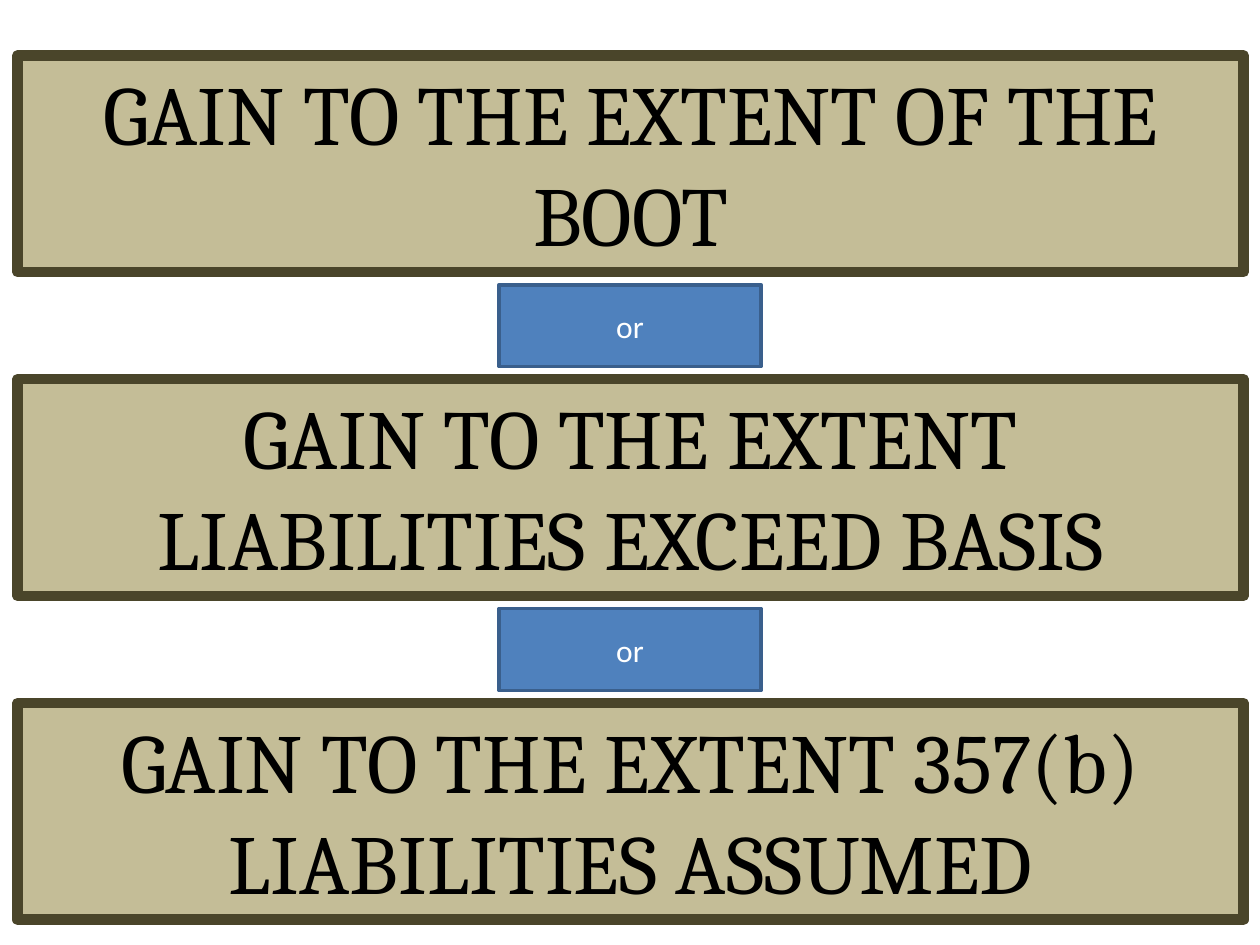
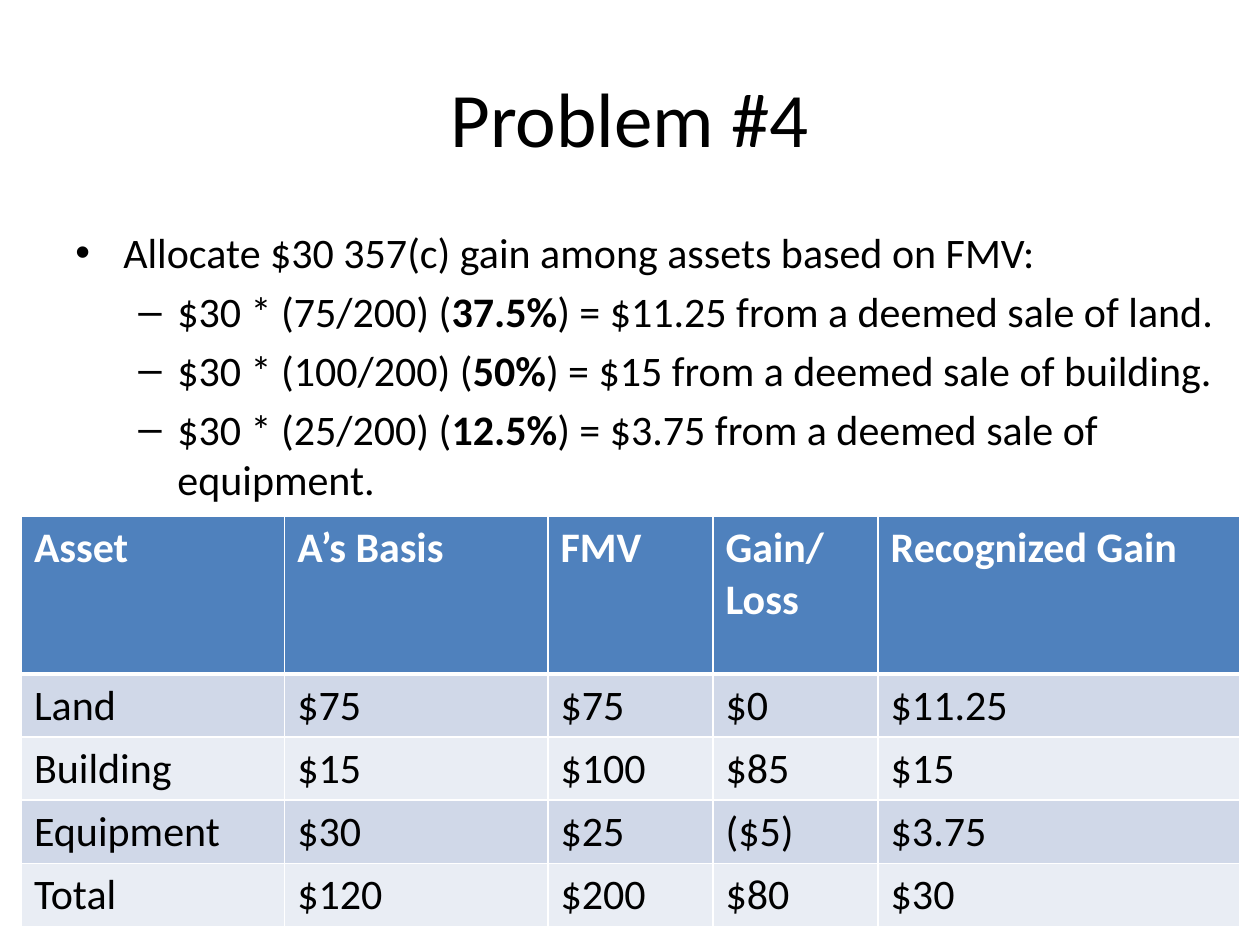
from dataclasses import dataclass

from lxml.etree import SubElement
from pptx import Presentation
from pptx.dml.color import RGBColor
from pptx.enum.shapes import MSO_SHAPE as Preset
from pptx.enum.text import MSO_ANCHOR as Anchor, PP_ALIGN as Align
from pptx.oxml.ns import qn
from pptx.util import Inches, Pt


@dataclass(frozen=True)
class Theme:
    body_font: str = "Calibri"
    card_font: str = "Cambria"
    black: str = "000000"
    white: str = "FFFFFF"
    card_fill: str = "C4BD97"
    card_line: str = "4A452A"
    accent: str = "4F81BD"
    accent_line: str = "3A5F8C"
    bands: tuple = ("D0D8E8", "E9EDF4")
    card_size: int = 48
    title_size: int = 44
    body_size: int = 24
    label_size: int = 18


class Deck:
    def __init__(self, theme):
        self.theme = theme
        self.presentation = Presentation()
        self.presentation.slide_width = Inches(10)
        self.presentation.slide_height = Inches(7.5)
        self.slide = None

    def new_slide(self):
        layout = self.presentation.slide_layouts[6]
        self.slide = self.presentation.slides.add_slide(layout)

    def style(self, paragraph, size, color, font=None, bold=False):
        for run in paragraph.runs:
            run.font.name = font or self.theme.body_font
            run.font.size = Pt(size)
            run.font.bold = bold
            run.font.color.rgb = RGBColor.from_string(color)

    def box(self, text, left, top, width, height, fill, line, line_width,
            size, color, font=None, anchor=Anchor.MIDDLE):
        shape = self.slide.shapes.add_shape(
            Preset.RECTANGLE, Inches(left), Inches(top), Inches(width), Inches(height))
        shape.shadow.inherit = False
        shape.fill.solid()
        shape.fill.fore_color.rgb = RGBColor.from_string(fill)
        shape.line.color.rgb = RGBColor.from_string(line)
        shape.line.width = Pt(line_width)
        shape.text_frame.text = text
        shape.text_frame.vertical_anchor = anchor
        paragraph = shape.text_frame.paragraphs[0]
        paragraph.alignment = Align.CENTER
        self.style(paragraph, size, color, font)

    def card(self, text, left, top, width, height):
        theme = self.theme
        self.box(text, left, top, width, height, theme.card_fill, theme.card_line, 6,
                 theme.card_size, theme.black, theme.card_font, Anchor.TOP)

    def label(self, text, left, top, width, height):
        theme = self.theme
        self.box(text, left, top, width, height, theme.accent, theme.accent_line, 2,
                 theme.label_size, theme.white)

    def text_box(self, left, top, width, height):
        shape = self.slide.shapes.add_textbox(
            Inches(left), Inches(top), Inches(width), Inches(height))
        shape.text_frame.word_wrap = True
        return shape.text_frame

    def title(self, text):
        text_frame = self.text_box(0.5, 0.3, 9, 1.25)
        text_frame.text = text
        text_frame.vertical_anchor = Anchor.MIDDLE
        text_frame.paragraphs[0].alignment = Align.CENTER
        self.style(text_frame.paragraphs[0], self.theme.title_size, self.theme.black)

    def bullets(self, items, left, top, width, height):
        levels = (("•", 0.38, -0.38), ("–", 0.81, -0.31))
        text_frame = self.text_box(left, top, width, height)
        for index, (level, before, strong, after) in enumerate(items):
            paragraph = text_frame.paragraphs[0] if index == 0 else text_frame.add_paragraph()
            for part in filter(None, (before, strong, after)):
                paragraph.add_run().text = part
            self.style(paragraph, self.theme.body_size, self.theme.black)
            if strong:
                paragraph.runs[1].font.bold = True
            paragraph.level = level
            paragraph.space_before = Pt(0.2 * self.theme.body_size)
            character, margin, indent = levels[level]
            properties = paragraph._p.get_or_add_pPr()
            properties.set("marL", str(Inches(margin)))
            properties.set("indent", str(Inches(indent)))
            SubElement(properties, qn("a:buFont"), typeface="Arial")
            SubElement(properties, qn("a:buChar"), char=character)

    def border(self, cell, top, bottom):
        properties = cell._tc.get_or_add_tcPr()
        for side, width in (("L", 1), ("R", 1), ("T", top), ("B", bottom)):
            line = SubElement(properties, qn(f"a:ln{side}"), w=str(Pt(width)))
            fill = SubElement(line, qn("a:solidFill"))
            SubElement(fill, qn("a:srgbClr"), val=self.theme.white)

    def table(self, rows, left, top, widths, heights):
        theme = self.theme
        table = self.slide.shapes.add_table(
            len(rows), len(widths), Inches(left), Inches(top),
            Inches(sum(widths)), Inches(sum(heights))).table
        for column, width in zip(table.columns, widths):
            column.width = Inches(width)
        for index, (row, height, values) in enumerate(zip(table.rows, heights, rows)):
            row.height = Inches(height)
            header = index == 0
            fill = theme.accent if header else theme.bands[(index - 1) % 2]
            for cell, value in zip(row.cells, values):
                self.border(cell, 3 if index == 1 else 1, 3 if header else 1)
                cell.fill.solid()
                cell.fill.fore_color.rgb = RGBColor.from_string(fill)
                cell.text_frame.text = value
                for paragraph in cell.text_frame.paragraphs:
                    self.style(paragraph, theme.body_size,
                               theme.white if header else theme.black, bold=header)


def gain_limits_slide(deck):
    deck.new_slide()
    limits = (
        "GAIN TO THE EXTENT OF THE BOOT",
        "GAIN TO THE EXTENT LIABILITIES EXCEED BASIS",
        "GAIN TO THE EXTENT 357(b) LIABILITIES ASSUMED",
    )
    first_top, card_height, pitch, label_height = 0.44, 1.72, 2.57, 0.65
    label_offset = (card_height + pitch - label_height) / 2
    for index, limit in enumerate(limits):
        top = first_top + index * pitch
        deck.card(limit, 0.14, top, 9.73, card_height)
        if index < len(limits) - 1:
            deck.label("or", 3.96, top + label_offset, 2.08, label_height)


def problem_slide(deck):
    deck.new_slide()
    deck.title("Problem #4")
    shares = (
        ("75", "37.5%", "$11.25", "land"),
        ("100", "50%", "$15", "building"),
        ("25", "12.5%", "$3.75", "equipment"),
    )
    items = [(0, "Allocate $30 357(c) gain among assets based on FMV:", "", "")]
    items += [(1, f"$30 * ({value}/200) (", percent, f") = {gain} from a deemed sale of {asset}.")
              for value, percent, gain, asset in shares]
    deck.bullets(items, 0.5, 1.75, 9.42, 4.95)
    rows = (
        ("Asset", "A’s Basis", "FMV", "Gain/\nLoss", "Recognized Gain"),
        ("Land", "$75", "$75", "$0", "$11.25"),
        ("Building", "$15", "$100", "$85", "$15"),
        ("Equipment", "$30", "$25", "($5)", "$3.75"),
        ("Total", "$120", "$200", "$80", "$30"),
    )
    deck.table(rows, 0.17, 4.1, (2.09, 2.09, 1.31, 1.31, 2.87), (1.25,) + (0.5,) * 4)


def main():
    deck = Deck(Theme())
    gain_limits_slide(deck)
    problem_slide(deck)
    deck.presentation.save("out.pptx")


if __name__ == "__main__":
    main()
